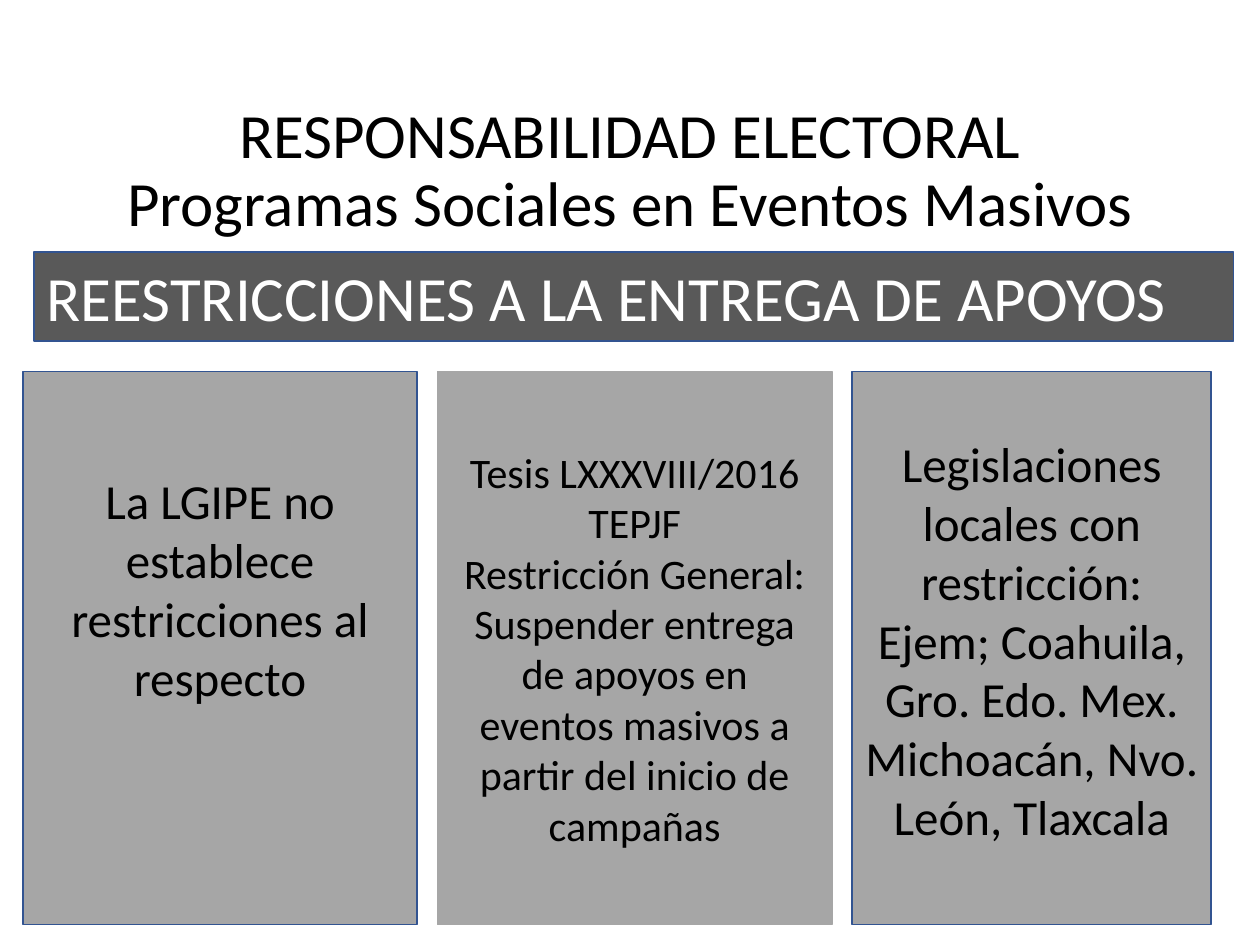
"""Build a slide on limits to handing out social aid at mass events."""
from pptx import Presentation
from pptx.dml.color import RGBColor
from pptx.enum.shapes import MSO_SHAPE
from pptx.enum.text import MSO_ANCHOR, PP_ALIGN
from pptx.util import Cm, Pt

TITLE = ["RESPONSABILIDAD ELECTORAL\vProgramas Sociales en Eventos Masivos"]
BANNER = ["REESTRICCIONES A LA ENTREGA DE APOYOS"]
CARDS = [
    {"text": ["La LGIPE no establece restricciones al respecto"],
     "size": 28, "width": 7.95, "edge": "325491", "base": 2.54},
    {"text": ["Tesis LXXXVIII/2016 TEPJF",
              "Restricción General: Suspender entrega de apoyos en eventos "
              "masivos a partir del inicio de campañas"],
     "size": 24, "width": 7.95, "edge": "A6A6A6", "base": 0.13},
    {"text": ["Legislaciones locales con restricción:",
              "Ejem; Coahuila, Gro. Edo. Mex. Michoacán, Nvo. León, Tlaxcala"],
     "size": 28, "width": 7.24, "edge": "325491", "base": 0.47},
]
LEFT, TOP, TALL, GAP = 0.46, 7.49, 11.15, 0.41


def color(code):
    return RGBColor.from_string(code)


def apply(target, values):
    for name, value in values.items():
        setattr(target, name, value)


def write(shape, lines, size, ink, align, base=0.13, lead=None):
    frame = shape.text_frame
    apply(frame, {"word_wrap": True, "vertical_anchor": MSO_ANCHOR.MIDDLE,
                  "margin_bottom": Cm(base)})
    frame.text = "\n".join(lines)
    for para in frame.paragraphs:
        apply(para, {"alignment": align, "line_spacing": lead})
        apply(para.font, {"name": "Calibri", "size": Pt(size)})
        para.font.color.rgb = color(ink)


def panel(slide, box, fill, edge):
    shape = slide.shapes.add_shape(MSO_SHAPE.RECTANGLE, *map(Cm, box))
    shape.shadow.inherit = False
    shape.fill.solid()
    shape.fill.fore_color.rgb = color(fill)
    shape.line.color.rgb = color(edge)
    shape.line.width = Pt(1)
    return shape


def main():
    deck = Presentation()
    apply(deck, {"slide_width": Cm(25.4), "slide_height": Cm(19.05)})
    slide = deck.slides.add_slide(deck.slide_layouts[6])

    title = slide.shapes.add_textbox(*map(Cm, (1.75, 1.88, 21.9, 3.17)))
    write(title, TITLE, 36, "000000", PP_ALIGN.CENTER, lead=0.9)

    banner = panel(slide, (0.69, 5.08, 24.18, 1.8), "595959", "325491")
    write(banner, BANNER, 36, "FFFFFF", PP_ALIGN.LEFT)

    left = LEFT
    for card in CARDS:
        box = (left, TOP, card["width"], TALL)
        shape = panel(slide, box, "A6A6A6", card["edge"])
        write(shape, card["text"], card["size"], "000000",
              PP_ALIGN.CENTER, card["base"])
        left += card["width"] + GAP

    deck.save("out.pptx")


if __name__ == "__main__":
    main()
